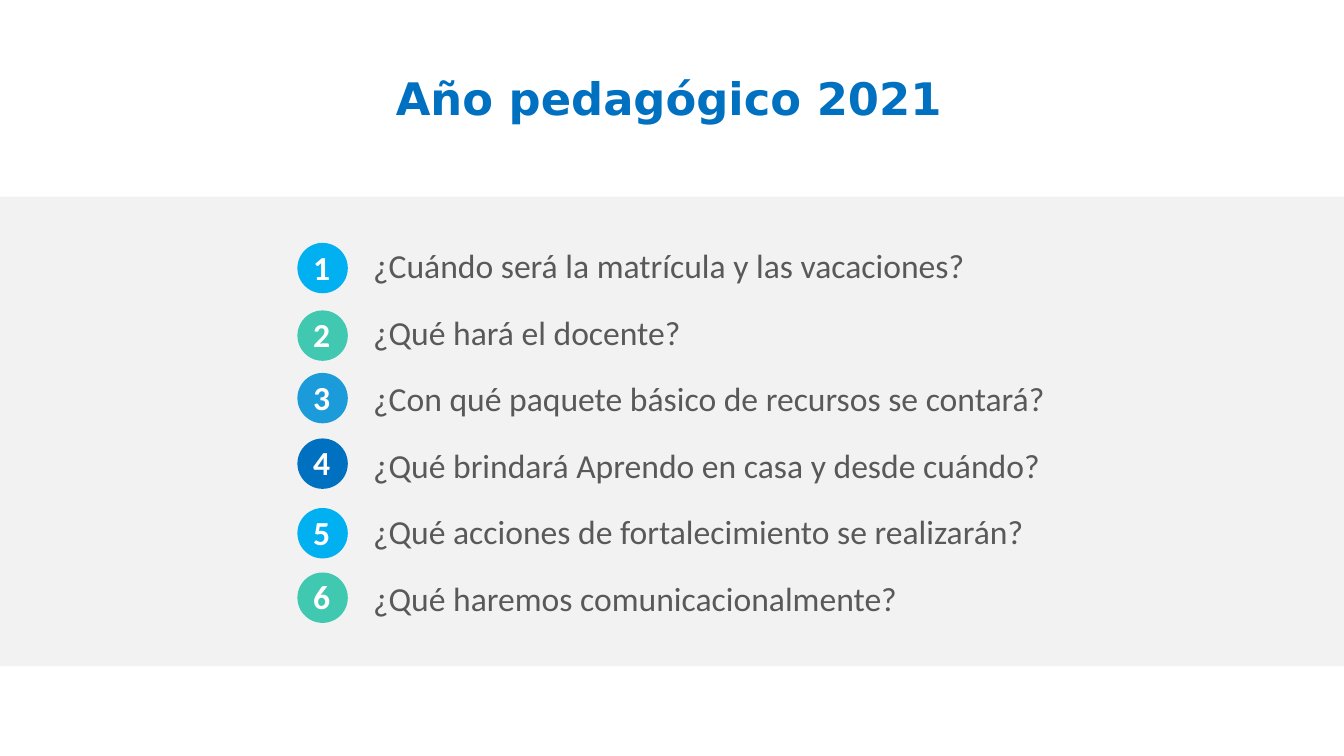
from pptx import Presentation
from pptx.dml.color import RGBColor
from pptx.enum.shapes import MSO_SHAPE as Shape
from pptx.enum.text import MSO_ANCHOR as Anchor, PP_ALIGN as Align
from pptx.util import Inches, Pt

WHITE = RGBColor(0xFF, 0xFF, 0xFF)
PALE = RGBColor(0xF2, 0xF2, 0xF2)
GRAY = RGBColor(0x59, 0x59, 0x59)
NAVY = RGBColor(0x00, 0x70, 0xC0)
SKY = RGBColor(0x00, 0xB0, 0xF0)
TEAL = RGBColor(0x40, 0xC8, 0xB1)
BLUE = RGBColor(0x1C, 0x9B, 0xDA)

# Question, top of its circle, colour of its circle
ITEMS = [
    ("¿Cuándo será la matrícula y las vacaciones?", 2.41, SKY),
    ("¿Qué hará el docente?", 3.08, TEAL),
    ("¿Con qué paquete básico de recursos se contará?", 3.7, BLUE),
    ("¿Qué brindará Aprendo en casa y desde cuándo?", 4.35, NAVY),
    ("¿Qué acciones de fortalecimiento se realizarán?", 5.04, SKY),
    ("¿Qué haremos comunicacionalmente?", 5.68, TEAL),
]
FIRST, STEP = 2.46, 0.66


def add_form(slide, kind, box, color):
    form = slide.shapes.add_shape(kind, *map(Inches, box))
    form.shadow.inherit = False
    form.fill.solid()
    form.fill.fore_color.rgb = color
    form.line.fill.background()


def add_text(slide, text, box, size=24, font="Calibri", color=GRAY,
             bold=False, align=Align.LEFT, space=0.9, left=0.1, right=0.1):
    frame = slide.shapes.add_textbox(*map(Inches, box)).text_frame
    frame.word_wrap = True
    frame.vertical_anchor = Anchor.MIDDLE
    frame.margin_left, frame.margin_right = Inches(left), Inches(right)
    para = frame.paragraphs[0]
    para.alignment = align
    para.line_spacing = space
    run = para.add_run()
    run.text = text
    run.font.size = Pt(size)
    run.font.name = font
    run.font.bold = bold
    run.font.color.rgb = color


def add_item(slide, index, text, top, color):
    add_text(slide, text, (3.3, FIRST + index * STEP, 7.78, 0.39),
             left=0.4, right=0.07)
    add_form(slide, Shape.OVAL, (2.95, top, 0.5, 0.5), color)
    add_text(slide, str(index + 1), (2.94, top + 0.06, 0.5, 0.43),
             color=WHITE, bold=True, align=Align.CENTER, space=0.8)


def main():
    deck = Presentation()
    deck.slide_width, deck.slide_height = Inches(13.33), Inches(7.5)
    slide = deck.slides.add_slide(deck.slide_layouts[6])

    # Band and title
    add_form(slide, Shape.RECTANGLE, (0, 1.95, 13.33, 4.66), PALE)
    add_text(slide, "Año pedagógico 2021", (2, 0.28, 9.27, 1.45), size=32,
             font="DejaVu Sans", color=NAVY, bold=True, align=Align.CENTER)

    # Numbered questions
    for index, item in enumerate(ITEMS):
        add_item(slide, index, *item)

    deck.save("out.pptx")


if __name__ == "__main__":
    main()
